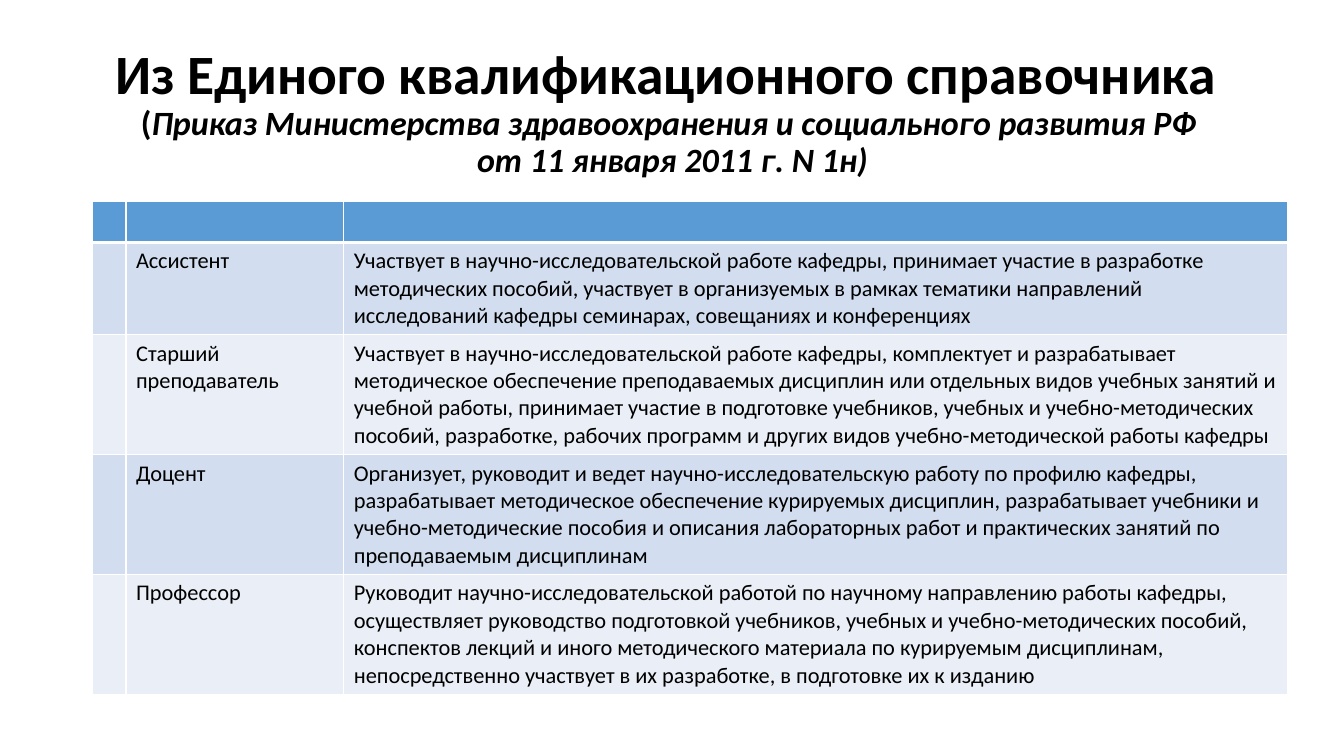
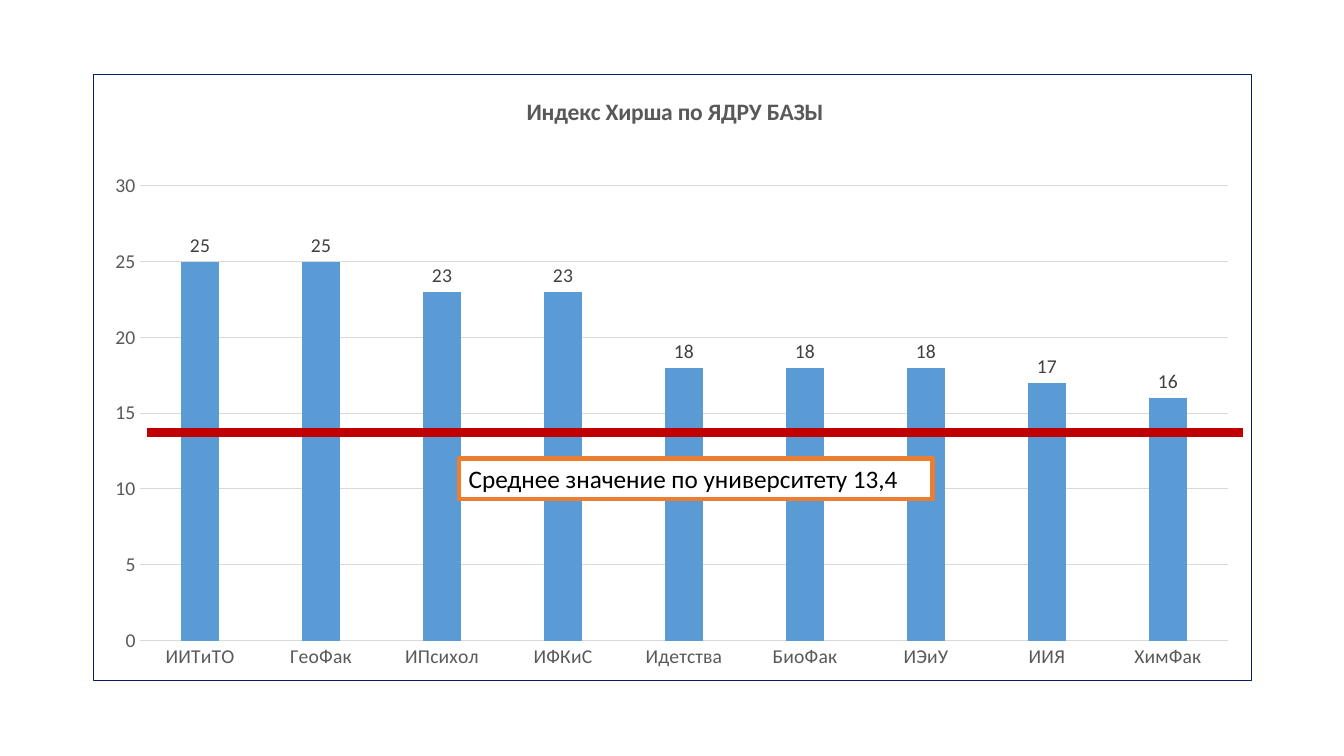
from copy import deepcopy
from dataclasses import dataclass
from lxml import etree
from pptx import Presentation
from pptx.chart.data import CategoryChartData
from pptx.dml.color import RGBColor
from pptx.enum.chart import XL_CHART_TYPE, XL_LABEL_POSITION, XL_TICK_MARK
from pptx.enum.shapes import MSO_CONNECTOR
from pptx.enum.text import MSO_ANCHOR, MSO_AUTO_SIZE, PP_ALIGN
from pptx.oxml import parse_xml
from pptx.oxml.ns import nsdecls, qn
from pptx.util import Pt

COLUMN = XL_CHART_TYPE.COLUMN_CLUSTERED
OUTSIDE = XL_LABEL_POSITION.OUTSIDE_END
NO_TICK = XL_TICK_MARK.NONE
STRAIGHT = MSO_CONNECTOR.STRAIGHT
MIDDLE = MSO_ANCHOR.MIDDLE
NO_FIT, GROW = MSO_AUTO_SIZE.NONE, MSO_AUTO_SIZE.SHAPE_TO_FIT_TEXT
CENTER = PP_ALIGN.CENTER
TITLE_ONLY, BLANK = 5, 6
SCALE = 9144  # EMU in one px, 100 px to the inch


@dataclass(frozen=True)
class Theme:
    font: str = "Calibri"
    ink: str = "000000"
    paper: str = "FFFFFF"
    blue: str = "5B9BD5"
    bands: tuple = ("D2DEEF", "EAEFF7")
    navy: str = "002060"
    red: str = "C00000"
    orange: str = "ED7D31"
    gray: str = "595959"
    dark: str = "404040"
    grid: str = "D9D9D9"
    head: float = 39.6
    sub: float = 24.3
    note: int = 18
    chart: float = 16.8
    cell: int = 16
    label: int = 14


THEME = Theme()

ROLES = [
    ("Ассистент",
     "Участвует в научно-исследовательской работе кафедры, принимает участие в "
     "разработке методических пособий, участвует в организуемых в рамках тематики "
     "направлений исследований кафедры семинарах, совещаниях и конференциях"),
    ("Старший преподаватель",
     "Участвует в научно-исследовательской работе кафедры, комплектует и "
     "разрабатывает методическое обеспечение преподаваемых дисциплин или отдельных "
     "видов учебных занятий и учебной работы, принимает участие в подготовке "
     "учебников, учебных и учебно-методических пособий, разработке, рабочих программ "
     "и других видов учебно-методической работы кафедры"),
    ("Доцент",
     "Организует, руководит и ведет научно-исследовательскую работу по профилю "
     "кафедры, разрабатывает методическое обеспечение курируемых дисциплин, "
     "разрабатывает учебники и учебно-методические пособия и описания лабораторных "
     "работ и практических занятий по преподаваемым дисциплинам"),
    ("Профессор",
     "Руководит научно-исследовательской работой по научному направлению работы "
     "кафедры, осуществляет руководство подготовкой учебников, учебных и "
     "учебно-методических пособий, конспектов лекций и иного методического материала "
     "по курируемым дисциплинам, непосредственно участвует в их разработке, в "
     "подготовке их к изданию"),
]
HIRSCH = {"ИИТиТО": 25, "ГеоФак": 25, "ИПсихол": 23, "ИФКиС": 23, "Идетства": 18,
          "БиоФак": 18, "ИЭиУ": 18, "ИИЯ": 17, "ХимФак": 16}


# Shared helpers
def px(*nums):
    return [round(num * SCALE) for num in nums]


def rgb(color):
    return RGBColor.from_string(color)


def style(font, size, color=THEME.ink, bold=False, italic=False):
    font.name, font.size = THEME.font, Pt(size)
    font.bold, font.italic = bold, italic
    font.color.rgb = rgb(color)


def paint(shape, color):
    shape.fill.solid()
    shape.fill.fore_color.rgb = rgb(color)


def stroke(line, color, width):
    line.color.rgb = rgb(color)
    line.width = Pt(width)


def edge(cell, sides):
    """Draw white cell borders, widths given by side."""
    props = cell._tc.get_or_add_tcPr()
    for spot, (side, width) in enumerate(sides.items()):
        props.insert(spot, parse_xml(
            f'<a:ln{side} {nsdecls("a")} w="{Pt(width)}"><a:solidFill>'
            f'<a:srgbClr val="{THEME.paper}"/></a:solidFill></a:ln{side}>'))


def layout(box, left, top, size=None):
    """Place a chart part by px within the chart box."""
    wide, high = box[2:]
    node = etree.Element(qn("c:layout"))
    spot = etree.SubElement(node, qn("c:manualLayout"))
    parts = [("layoutTarget", "inner")] if size else []
    parts += [("xMode", "edge"), ("yMode", "edge"), ("x", left / wide), ("y", top / high)]
    if size:
        parts += [("w", size[0] / wide), ("h", size[1] / high)]
    for name, val in parts:
        etree.SubElement(spot, qn(f"c:{name}")).set("val", str(val))
    return node


# Regions
def add_title(slide, box, lines):
    title = slide.shapes.title
    title.left, title.top, title.width, title.height = px(*box)
    frame = title.text_frame
    frame.auto_size, frame.vertical_anchor = NO_FIT, MIDDLE
    par = frame.paragraphs[0]
    par.alignment, par.line_spacing = CENTER, 0.9
    for spot, line in enumerate(lines):
        if spot:
            par.add_line_break()
        for text, size, italic in line:
            run = par.add_run()
            run.text = text
            style(run.font, size, bold=True, italic=italic)
    # Each break takes the type size of the line it ends
    for mark in par._p.findall(qn("a:br")):
        mark.append(deepcopy(mark.getprevious().find(qn("a:rPr"))))


def add_roles(slide, box, cols, rows):
    table = slide.shapes.add_table(len(rows), len(cols), *px(*box)).table
    for col, width in zip(table.columns, px(*cols)):
        col.width = width
    for row, height in zip(table.rows, px(*rows)):
        row.height = height
    texts = [("", "", "")] + [("", *role) for role in ROLES]
    for num, row in enumerate(texts):
        color = THEME.bands[(num - 1) % 2] if num else THEME.blue
        sides = {"L": 1, "R": 1, "T": 3 if num == 1 else 1, "B": 1 if num else 3}
        for col, text in enumerate(row):
            cell = table.cell(num, col)
            paint(cell, color)
            edge(cell, sides)
            if text:
                cell.text_frame.text = text
                style(cell.text_frame.paragraphs[0].runs[0].font, THEME.cell)


def add_bars(slide, box):
    data = CategoryChartData()
    data.categories = list(HIRSCH)
    data.add_series("Индекс Хирша", list(HIRSCH.values()))
    chart = slide.shapes.add_chart(COLUMN, *px(*box), data).chart
    style(chart.font, THEME.label)
    chart.has_legend = False

    # Heading and frame
    chart.has_title = True
    head = chart.chart_title
    head.text_frame.text = "Индекс Хирша по ЯДРУ БАЗЫ"
    style(head.text_frame.paragraphs[0].runs[0].font, THEME.chart, THEME.gray, bold=True)
    for old in head._element.findall(qn("c:layout")):
        head._element.remove(old)
    head._element.find(qn("c:tx")).addnext(layout(box, 426, 17))
    root = chart._chartSpace.find(qn("c:chart"))
    root.addnext(parse_xml(
        f'<c:spPr {nsdecls("c", "a")}><a:noFill/><a:ln w="{Pt(0.75)}"><a:solidFill>'
        f'<a:srgbClr val="{THEME.navy}"/></a:solidFill></a:ln></c:spPr>'))
    area = root.find(qn("c:plotArea"))
    for old in area.findall(qn("c:layout")):
        area.remove(old)
    area.insert(0, layout(box, 46, 111, (1081, 452)))

    # Axes
    for axis in (chart.category_axis, chart.value_axis):
        axis.major_tick_mark = axis.minor_tick_mark = NO_TICK
        style(axis.tick_labels.font, THEME.label, THEME.gray)
    stroke(chart.category_axis.format.line, THEME.grid, 0.75)
    scale = chart.value_axis
    scale.minimum_scale, scale.maximum_scale, scale.major_unit = 0, 30, 5
    scale.format.line.fill.background()
    stroke(scale.major_gridlines.format.line, THEME.grid, 0.75)

    # Bars and values
    plot = chart.plots[0]
    plot.gap_width, plot.overlap, plot.vary_by_categories = 219, -27, False
    bars = plot.series[0]
    paint(bars.format, THEME.blue)
    labels = bars.data_labels
    labels.show_value, labels.position = True, OUTSIDE
    style(labels.font, THEME.label, THEME.dark)


def add_mean(slide, box, text):
    """Draw the mean line across the box and its note below."""
    left, top, width, height = box
    line = slide.shapes.add_connector(STRAIGHT, *px(left, top, left + width, top))
    stroke(line.line, THEME.red, 6)
    etree.SubElement(line._element.spPr, qn("a:effectLst"))
    note = slide.shapes.add_textbox(*px(left + 309, top + 26, 470, height - 26))
    paint(note, THEME.paper)
    stroke(note.line, THEME.orange, 3)
    frame = note.text_frame
    frame.word_wrap, frame.auto_size = True, GROW
    frame.text = text
    style(frame.paragraphs[0].runs[0].font, THEME.note)


# Slides
def roles_slide(deck):
    slide = deck.slides.add_slide(deck.slide_layouts[TITLE_ONLY])
    add_title(slide, (92, 40, 1150, 145), [
        [("Из Единого квалификационного справочника ", THEME.head, False)],
        [("(", THEME.sub, False),
         ("Приказ Министерства здравоохранения и социального развития РФ ",
          THEME.sub, True)],
        [("от 11 января 2011 г. N 1н)", THEME.sub, True)],
    ])
    add_roles(slide, (92, 200, 1185, 487), (33, 216, 936), (40, 91, 119, 119, 119))


def index_slide(deck):
    slide = deck.slides.add_slide(deck.slide_layouts[BLANK])
    add_bars(slide, (92, 73, 1150, 603))
    add_mean(slide, (146, 429, 1087, 66), "Среднее значение по университету 13,4")


def main():
    deck = Presentation()
    deck.slide_width, deck.slide_height = px(1333, 750)
    roles_slide(deck)
    index_slide(deck)
    deck.save("out.pptx")


if __name__ == "__main__":
    main()
